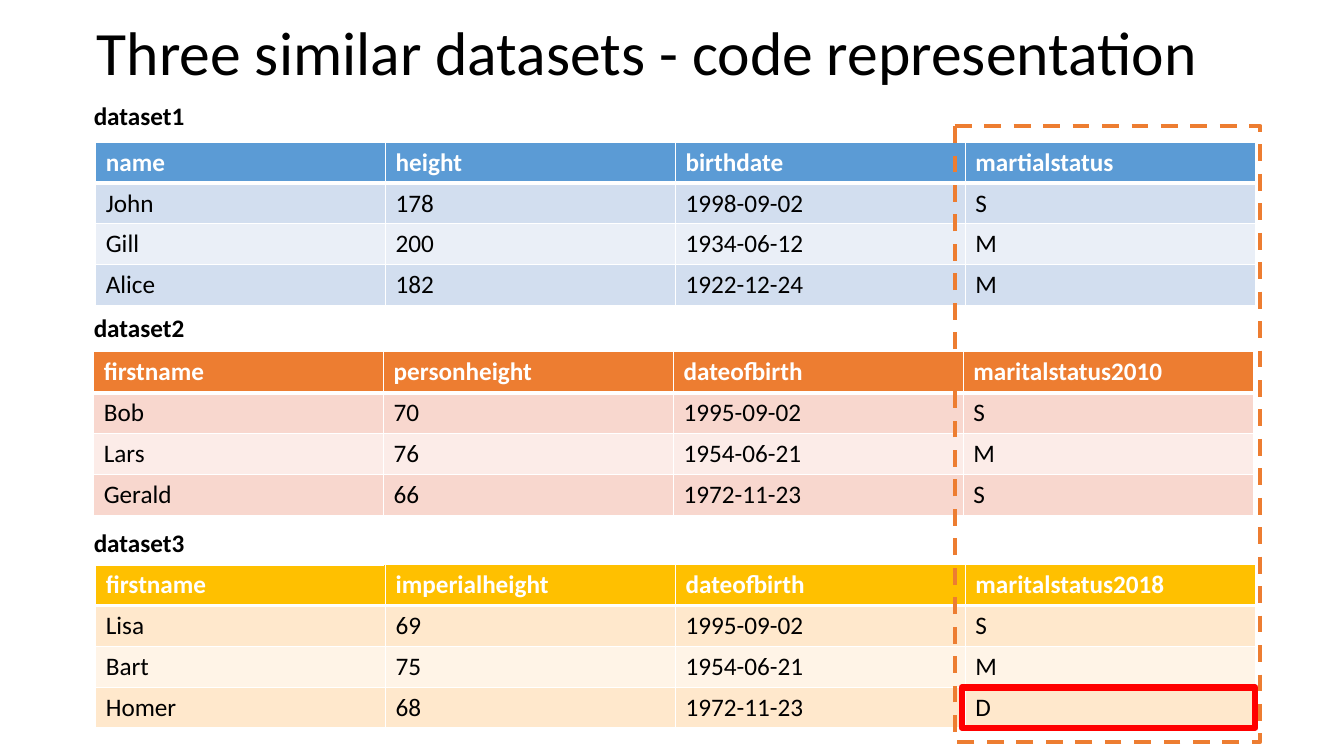
"""Build a slide that compares three similar datasets as tables."""
from lxml import etree
from pptx import Presentation
from pptx.dml.color import RGBColor
from pptx.enum.dml import MSO_LINE
from pptx.enum.shapes import MSO_SHAPE
from pptx.enum.text import MSO_ANCHOR, MSO_AUTO_SIZE, PP_ALIGN
from pptx.oxml.ns import qn
from pptx.util import Inches, Pt

RECT, ROUND = MSO_SHAPE.RECTANGLE, MSO_SHAPE.ROUNDED_RECTANGLE
DASH = MSO_LINE.DASH
MIDDLE, LEFT = MSO_ANCHOR.MIDDLE, PP_ALIGN.LEFT
FIXED = MSO_AUTO_SIZE.NONE

FONT = "Calibri"
COLORS = {
    "black": "000000", "white": "FFFFFF", "red": "FF0000",
    "blue": "5B9BD5", "blue band": "D2DEEF", "blue pale": "EAEFF7",
    "orange": "ED7D31", "orange band": "F8D7CE", "orange pale": "FCECE8",
    "gold": "FFC000", "gold band": "FFE8CC", "gold pale": "FFF4E7",
}
TITLE = "Three similar datasets - code representation"
DATASETS = [
    {"label": "dataset1", "label_top": 0.96, "left": 0.95, "top": 1.41, "hue": "blue",
     "rows": [("name", "height", "birthdate", "martialstatus"),
              ("John", "178", "1998-09-02", "S"),
              ("Gill", "200", "1934-06-12", "M"),
              ("Alice", "182", "1922-12-24", "M")]},
    {"label": "dataset2", "label_top": 3.06, "left": 0.93, "top": 3.49, "hue": "orange",
     "rows": [("firstname", "personheight", "dateofbirth", "maritalstatus2010"),
              ("Bob", "70", "1995-09-02", "S"),
              ("Lars", "76", "1954-06-21", "M"),
              ("Gerald", "66", "1972-11-23", "S")]},
    {"label": "dataset3", "label_top": 5.19, "left": 0.95, "top": 5.6, "hue": "gold",
     "rows": [("firstname", "imperialheight", "dateofbirth", "maritalstatus2018"),
              ("Lisa", "69", "1995-09-02", "S"),
              ("Bart", "75", "1954-06-21", "M"),
              ("Homer", "68", "1972-11-23", "D")]},
]
FRAMES = [
    (RECT, (9.54, 6.82, 2.91, 0.4), "red", 4.5, None),
    (ROUND, (9.47, 1.25, 3.03, 6.11), "orange", 3, DASH),
]
LABEL_LEFT, COL, ROW = 0.93, 2.875, 0.405


def rgb(name):
    return RGBColor.from_string(COLORS[name])


def write(frame, text, size=18, color="black", bold=False, spacing=None):
    para = frame.paragraphs[0]
    para.alignment = LEFT
    para.line_spacing = spacing
    run = para.add_run()
    run.text = text
    run.font.name = FONT
    run.font.size = Pt(size)
    run.font.bold = bold
    run.font.color.rgb = rgb(color)


def edge(cell, top=1, bottom=1):
    props = cell._tc.get_or_add_tcPr()
    for side, width in (("L", 1), ("R", 1), ("T", top), ("B", bottom)):
        line = etree.SubElement(props, qn(f"a:ln{side}"), w=str(Pt(width)))
        fill = etree.SubElement(line, qn("a:solidFill"))
        etree.SubElement(fill, qn("a:srgbClr"), val=COLORS["white"])


def add_grid(slide, left, top, rows, cols):
    size = Inches(COL * cols), Inches(ROW * rows)
    grid = slide.shapes.add_table(rows, cols, Inches(left), Inches(top), *size).table
    grid.horz_banding = False
    return grid


def add_label(slide, text, top):
    grid = add_grid(slide, LABEL_LEFT, top, 1, 1)
    grid.first_row = False
    cell = grid.cell(0, 0)
    cell.margin_left = 0
    edge(cell, bottom=3)
    cell.fill.background()
    write(cell.text_frame, text, bold=True)


def add_data(slide, data):
    rows, hue = data["rows"], data["hue"]
    grid = add_grid(slide, data["left"], data["top"], len(rows), len(rows[0]))
    for r, row in enumerate(rows):
        head = r == 0
        fill = hue if head else f"{hue} band" if r % 2 else f"{hue} pale"
        for c, text in enumerate(row):
            cell = grid.cell(r, c)
            edge(cell, top=3 if r == 1 else 1, bottom=3 if head else 1)
            cell.fill.solid()
            cell.fill.fore_color.rgb = rgb(fill)
            write(cell.text_frame, text, color="white" if head else "black", bold=head)


def add_frame(slide, kind, box, color, width, dash):
    shape = slide.shapes.add_shape(kind, *map(Inches, box))
    shape.shadow.inherit = False
    shape.fill.background()
    shape.line.color.rgb = rgb(color)
    shape.line.width = Pt(width)
    if dash:
        shape.line.dash_style = dash
    if kind == ROUND:
        shape.adjustments[0] = 0


def add_title(slide):
    title = slide.shapes.title
    title.left, title.top, title.width, title.height = map(Inches, (0.86, -0.17, 11.5, 1.45))
    frame = title.text_frame
    frame.word_wrap = True
    frame.auto_size = FIXED
    frame.vertical_anchor = MIDDLE
    write(frame, TITLE, size=44, spacing=0.9)


def main():
    deck = Presentation()
    deck.slide_width, deck.slide_height = Inches(13.33), Inches(7.5)
    slide = deck.slides.add_slide(deck.slide_layouts[5])
    add_title(slide)
    for data in DATASETS:
        add_data(slide, data)
        add_label(slide, data["label"], data["label_top"])
    for frame in FRAMES:
        add_frame(slide, *frame)
    deck.save("out.pptx")


if __name__ == "__main__":
    main()
